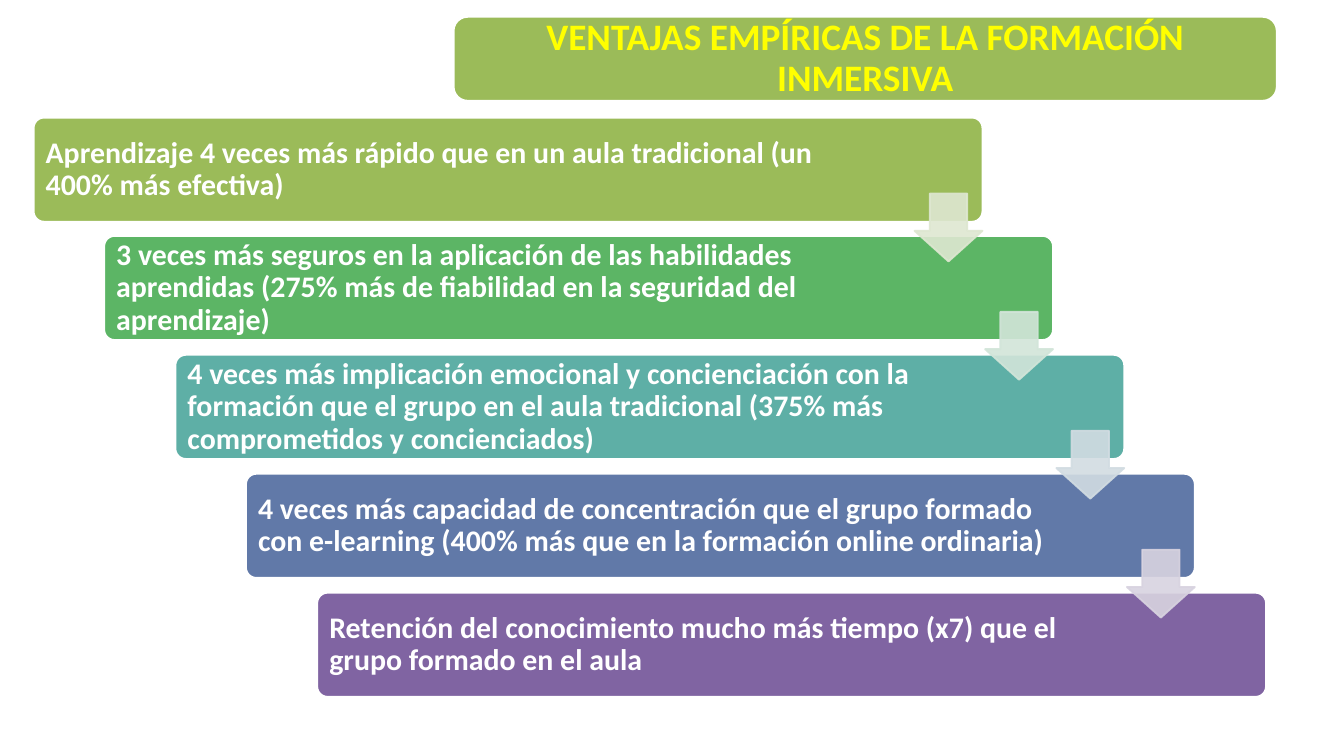
import pptx
import pptx.util
import pptx.dml.color
import pptx.enum.shapes
import pptx.enum.text
import pptx.oxml.ns
import lxml.etree

PX = 9144
SHAPE = pptx.enum.shapes.MSO_SHAPE
ALIGN = pptx.enum.text.PP_ALIGN
COLORS = {
    "white": "FFFFFF",
    "title": "FFFF00",
    "olive": "9BBB59",
    "green": "5CB565",
    "teal": "5EAFA6",
    "blue": "6179A8",
    "purple": "8064A2",
    "olive_pale": "DEE7D1",
    "green_pale": "D2E5D9",
    "teal_pale": "D2DCE2",
    "blue_pale": "D8D3E0",
}
STEPS = [
    ("olive", 1226, "Aprendizaje 4 veces más rápido que en un aula tradicional (un 400% más efectiva)"),
    ("green", 1196, "3 veces más seguros en la aplicación de las habilidades aprendidas "
                    "(275% más de fiabilidad en la seguridad del aprendizaje)"),
    ("teal", 1196, "4 veces más implicación emocional y concienciación con la formación que el grupo "
                   "en el aula tradicional (375% más comprometidos y concienciados)"),
    ("blue", 1196, "4 veces más capacidad de concentración que el grupo formado con e-learning "
                   "(400% más que en la formación online ordinaria)"),
    ("purple", 1196, "Retención del conocimiento mucho más tiempo (x7) que el grupo formado en el aula"),
]


def px(n):
    return pptx.util.Emu(round(n * PX))


def rgb(name):
    return pptx.dml.color.RGBColor.from_string(COLORS[name])


def write(tf, text, size=32, color="white", align=ALIGN.LEFT, inset=13):
    tf.word_wrap = True
    tf.vertical_anchor = pptx.enum.text.MSO_ANCHOR.MIDDLE
    tf.margin_left = tf.margin_right = tf.margin_top = tf.margin_bottom = px(inset)
    p = tf.paragraphs[0]
    p.alignment = align
    p.line_spacing = 0.9
    r = p.add_run()
    r.text = text
    r.font.name = "Calibri"
    r.font.size = pptx.util.Pt(size)
    r.font.bold = True
    r.font.color.rgb = rgb(color)


class Deck:
    def __init__(self, prs):
        self.s = prs.slides.add_slide(prs.slide_layouts[6])

    def shape(self, kind, x, y, w, h, fill, line, adj=()):
        sp = self.s.shapes.add_shape(kind, px(x), px(y), px(w), px(h))
        sp.shadow.inherit = False
        for i, value in enumerate(adj):
            sp.adjustments[i] = value
        sp.fill.solid()
        sp.fill.fore_color.rgb = rgb(fill)
        sp.line.color.rgb = rgb(line)
        sp.line.width = pptx.util.Pt(2)
        return sp

    def text(self, x, y, w, h, text, **style):
        write(self.s.shapes.add_textbox(px(x), px(y), px(w), px(h)).text_frame, text, **style)

    def bar(self, x, y, w, h, fill, adj=()):
        self.shape(SHAPE.ROUNDED_RECTANGLE, x, y, w, h, fill, "white", adj)

    def arrow(self, x, y, size, color):
        sp = self.shape(SHAPE.DOWN_ARROW, x, y, size, size, color, color, (0.55, 0.45))
        qn = pptx.oxml.ns.qn
        for clr in sp._element.spPr.iter(qn("a:srgbClr")):
            lxml.etree.SubElement(clr, qn("a:alpha")).set("val", "90000")


def main():
    prs = pptx.Presentation()
    prs.slide_width, prs.slide_height = px(2000), px(1125)
    deck = Deck(prs)

    deck.bar(675, 25, 1225, 125, "olive")
    deck.text(681, 31, 1213, 113, "VENTAJAS EMPÍRICAS DE LA FORMACIÓN INMERSIVA",
              size=40, color="title", align=ALIGN.CENTER, inset=17)

    corners = [(50 + i * 1055 // 10, 175 + i * 707 // 4) for i in range(len(STEPS))]
    for (x, y), (color, text_width, text) in zip(corners, STEPS):
        deck.bar(x, y, 1412, 155, color, (0.1,))
        deck.text(x + 5, y + 5, text_width, 146, text)
    for (x, y), (color, _, _) in zip(corners[:-1], STEPS):
        deck.arrow(x + 1311, y + 113, 101, color + "_pale")

    prs.save("out.pptx")


if __name__ == "__main__":
    main()
